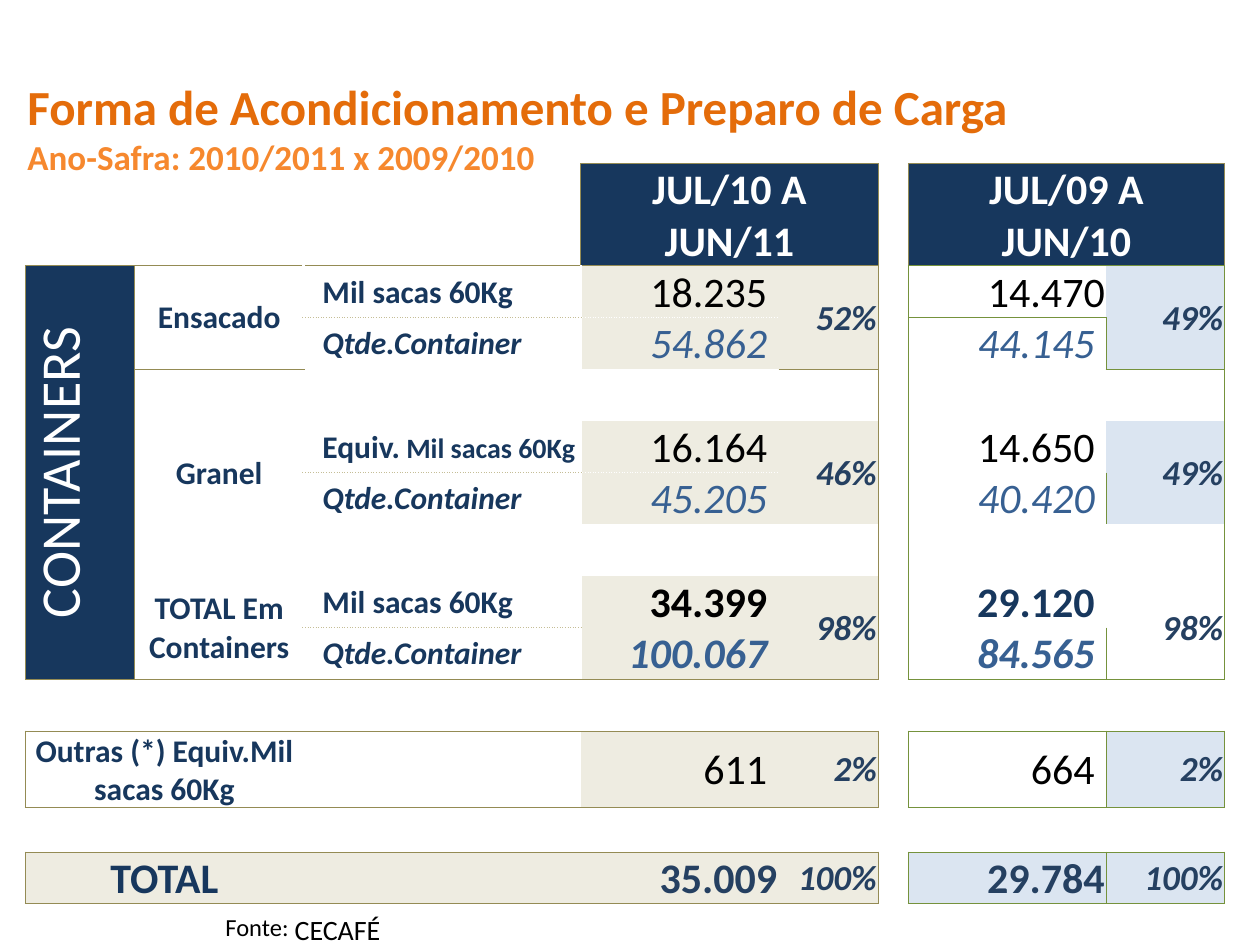
from dataclasses import dataclass

from lxml import etree
from pptx import Presentation
from pptx.dml.color import RGBColor
from pptx.enum.text import MSO_ANCHOR, MSO_AUTO_SIZE, PP_ALIGN
from pptx.oxml.ns import qn
from pptx.util import Inches, Pt

LEFT, CENTER, RIGHT = PP_ALIGN.LEFT, PP_ALIGN.CENTER, PP_ALIGN.RIGHT
MIDDLE = MSO_ANCHOR.MIDDLE
FIT = MSO_AUTO_SIZE.SHAPE_TO_FIT_TEXT
NO_STYLE = "{2D5ABB26-0587-4C30-8999-92F81FD0307C}"
SIDES = ("L", "R", "T", "B")


@dataclass(frozen=True)
class Theme:
    font: str = "Calibri"
    white: str = "FFFFFF"
    black: str = "000000"
    navy: str = "17375D"
    share: str = "254061"
    count: str = "376092"
    title: str = "E46C0A"
    subtitle: str = "F6882E"
    beige: str = "EEECE1"
    pale_blue: str = "DBE5F1"
    olive: str = "948B54"
    green: str = "75923C"
    dots: str = "C5BE97"
    title_size: int = 28
    side_size: int = 32
    value_size: int = 24
    share_size: int = 20
    label_size: int = 18
    small_size: int = 16
    source_size: int = 14


T = Theme()
COLS = (0.87, 1.06, 0.28, 2.2, 1.57, 0.79, 0.24, 1.57, 0.94)
ROWS = (0.81, *[0.41] * 9, 0.61, 0.35, 0.41)
GROUPS = (
    (1, "Ensacado", [("Mil sacas 60Kg", T.label_size)],
     ("18.235", "54.862", "52%"), ("14.470", "44.145", "49%")),
    (4, "Granel", [("Equiv.", T.label_size), (" Mil sacas 60Kg", T.small_size)],
     ("16.164", "45.205", "46%"), ("14.650", "40.420", "49%")),
    (7, "TOTAL Em Containers", [("Mil sacas 60Kg", T.label_size)],
     ("34.399", "100.067", "98%"), ("29.120", "84.565", "98%")),
)


def add_run(p, text, size, color, bold=False, italic=False):
    r = p.add_run()
    r.text = text
    r.font.name = T.font
    r.font.size = Pt(size)
    r.font.bold = bold
    r.font.italic = italic
    r.font.color.rgb = RGBColor.from_string(color)


def add_text(s, box, lines, bold=False):
    sp = s.shapes.add_textbox(*[Inches(v) for v in box])
    tf = sp.text_frame
    tf.word_wrap = False
    tf.auto_size = FIT
    p = tf.paragraphs[0]
    for i, (text, size, color) in enumerate(lines):
        if i:
            p.add_line_break()
        add_run(p, text, size, color, bold)


def add_title(s, box):
    add_text(s, box, [
        ("Forma de Acondicionamento e Preparo de Carga", T.title_size, T.title),
        ("Ano-Safra: 2010/2011 x 2009/2010", T.share_size, T.subtitle),
    ], bold=True)


def add_source(s, box):
    left, top, width, height = box
    add_text(s, (left, top, 0.71, height), [("Fonte:", T.source_size, T.black)])
    add_text(s, (left + 0.55, top, width - 0.55, height), [("CECAFÉ", T.small_size, T.black)])


class Grid:
    def __init__(self, s, box):
        frame = s.shapes.add_table(len(ROWS), len(COLS), *[Inches(v) for v in box])
        self.table = frame.table
        self.table.first_row = self.table.horz_banding = False
        frame._element.find(".//" + qn("a:tableStyleId")).text = NO_STYLE
        for col, width in zip(self.table.columns, COLS):
            col.width = Inches(width)
        for row, height in zip(self.table.rows, ROWS):
            row.height = Inches(height)
        self.owner = {}
        self.edges = {}
        for cell in self.table.iter_cells():
            cell.margin_left = cell.margin_right = cell.margin_top = Inches(0.01)
            cell.margin_bottom = 0
            cell.vertical_anchor = MIDDLE
            cell.fill.background()

    def merge(self, r0, c0, r1, c1):
        self.table.cell(r0, c0).merge(self.table.cell(r1, c1))
        for r in range(r0, r1 + 1):
            for c in range(c0, c1 + 1):
                self.owner[r, c] = (r0, c0)

    def fill(self, r0, c0, r1, c1, color):
        for r in range(r0, r1 + 1):
            for c in range(c0, c1 + 1):
                fill = self.table.cell(r, c).fill
                fill.solid()
                fill.fore_color.rgb = RGBColor.from_string(color)

    def edge(self, r, c, side, color, width=0.5, dash="solid"):
        for key in {(r, c), self.owner.get((r, c), (r, c))}:
            self.edges.setdefault(key, {})[side] = (color, width, dash)

    def outline(self, r0, c0, r1, c1, color):
        for r in range(r0, r1 + 1):
            self.edge(r, c0, "L", color)
            self.edge(r, c1, "R", color)
        for c in range(c0, c1 + 1):
            self.edge(r0, c, "T", color)
            self.edge(r1, c, "B", color)

    def draw_edges(self):
        for (r, c), sides in self.edges.items():
            tcPr = self.table.cell(r, c)._tc.get_or_add_tcPr()
            for i, side in enumerate(k for k in SIDES if k in sides):
                color, width, dash = sides[side]
                ln = etree.Element(qn("a:ln" + side), w=str(Pt(width)))
                solid = etree.SubElement(ln, qn("a:solidFill"))
                etree.SubElement(solid, qn("a:srgbClr"), val=color)
                etree.SubElement(ln, qn("a:prstDash"), val=dash)
                tcPr.insert(i, ln)

    def label(self, r, c, text, size, color, align=CENTER, bold=True, italic=False, pad=0.01):
        cell = self.table.cell(r, c)
        if align == LEFT:
            cell.margin_left = Inches(pad)
        elif align == RIGHT:
            cell.margin_right = Inches(pad)
        p = cell.text_frame.paragraphs[0]
        p.alignment = align
        runs = [(text, size)] if isinstance(text, str) else text
        for run_text, run_size in runs:
            add_run(p, run_text, run_size, color, bold, italic)

    def value(self, r, c, text, color, bold=False, italic=False, pad=0.09):
        self.label(r, c, text, T.value_size, color, RIGHT, bold, italic, pad)

    def share(self, r, c, text):
        self.label(r, c, text, T.share_size, T.share, RIGHT, italic=True)


def add_headers(g):
    g.merge(0, 0, 0, 3)
    for c, first, second in ((4, "JUL/10 A", "JUN/11"), (7, "JUL/09 A", "JUN/10")):
        g.merge(0, c, 0, c + 1)
        g.fill(0, c, 0, c + 1, T.navy)
        g.label(0, c, first, T.value_size, T.white)
        p = g.table.cell(0, c).text_frame.paragraphs[0]
        p.add_line_break()
        add_run(p, second, T.value_size, T.white, True)


def add_containers(g):
    g.merge(1, 0, 8, 0)
    g.fill(1, 0, 8, 0, T.navy)
    g.label(1, 0, "CONTAINERS", T.side_size, T.white, bold=False)
    g.table.cell(1, 0)._tc.get_or_add_tcPr().set("vert", "vert270")
    for r, name, label, current, previous in GROUPS:
        total = r == 7
        g.merge(r, 1, r + 1, 2)
        g.label(r, 1, name, T.label_size, T.navy)
        g.label(r, 3, label, T.label_size, T.navy, LEFT, pad=0.15)
        g.label(r + 1, 3, "Qtde.Container", T.label_size, T.navy, LEFT, italic=True, pad=0.15)
        g.fill(r, 4, r + 1, 5, T.beige)
        if not total:
            g.fill(r, 8, r + 1, 8, T.pale_blue)
            g.merge(r + 2, 1, r + 2, 2)
            g.edge(r, 4, "B", T.white, dash="sysDot")
        for c, (bags, boxes, share) in ((4, current), (7, previous)):
            g.merge(r, c + 1, r + 1, c + 1)
            color = T.navy if total and c == 7 else T.black
            g.value(r, c, bags, color, total, pad=0.01 if bags == "14.470" else 0.09)
            g.value(r + 1, c, boxes, T.count, total, True)
            g.share(r, c + 1, share)
        g.edge(r, 3, "B", T.dots, dash="sysDot")
        for row in (r, r + 1):
            g.edge(row, 3, "L", T.white, 1.5)


def add_totals(g):
    for r in (10, 12):
        g.merge(r, 0, r, 2)
    g.fill(10, 4, 10, 5, T.beige)
    g.fill(10, 8, 10, 8, T.pale_blue)
    g.fill(12, 0, 12, 5, T.beige)
    g.fill(12, 7, 12, 8, T.pale_blue)
    g.label(10, 0, "Outras (*) Equiv.Mil sacas 60Kg", T.label_size, T.navy)
    g.label(12, 0, "TOTAL", T.value_size, T.navy)
    for c, other, total in ((4, "611", "35.009"), (7, "664", "29.784")):
        g.value(10, c, other, T.black)
        g.share(10, c + 1, "2%")
        g.value(12, c, total, T.share, True, pad=0.01)
        g.share(12, c + 1, "100%")


def add_cargo_table(s, box):
    g = Grid(s, box)
    add_headers(g)
    add_containers(g)
    add_totals(g)
    for top, bottom in ((1, 8), (10, 10), (12, 12)):
        g.outline(top, 0, bottom, 5, T.olive)
        g.outline(top, 7, bottom, 8, T.green)
    g.outline(1, 0, 8, 0, T.olive)
    for c in (4, 7):
        g.outline(0, c, 0, c + 1, T.olive)
    g.draw_edges()


def main():
    prs = Presentation()
    prs.slide_width, prs.slide_height = Inches(10), Inches(7.5)
    s = prs.slides.add_slide(prs.slide_layouts[6])
    add_source(s, (1.69, 7.19, 1.44, 0.34))
    add_title(s, (0.12, 0.56, 8.07, 0.91))
    add_cargo_table(s, (0.2, 1.3, sum(COLS), sum(ROWS)))
    prs.save("out.pptx")


if __name__ == "__main__":
    main()
